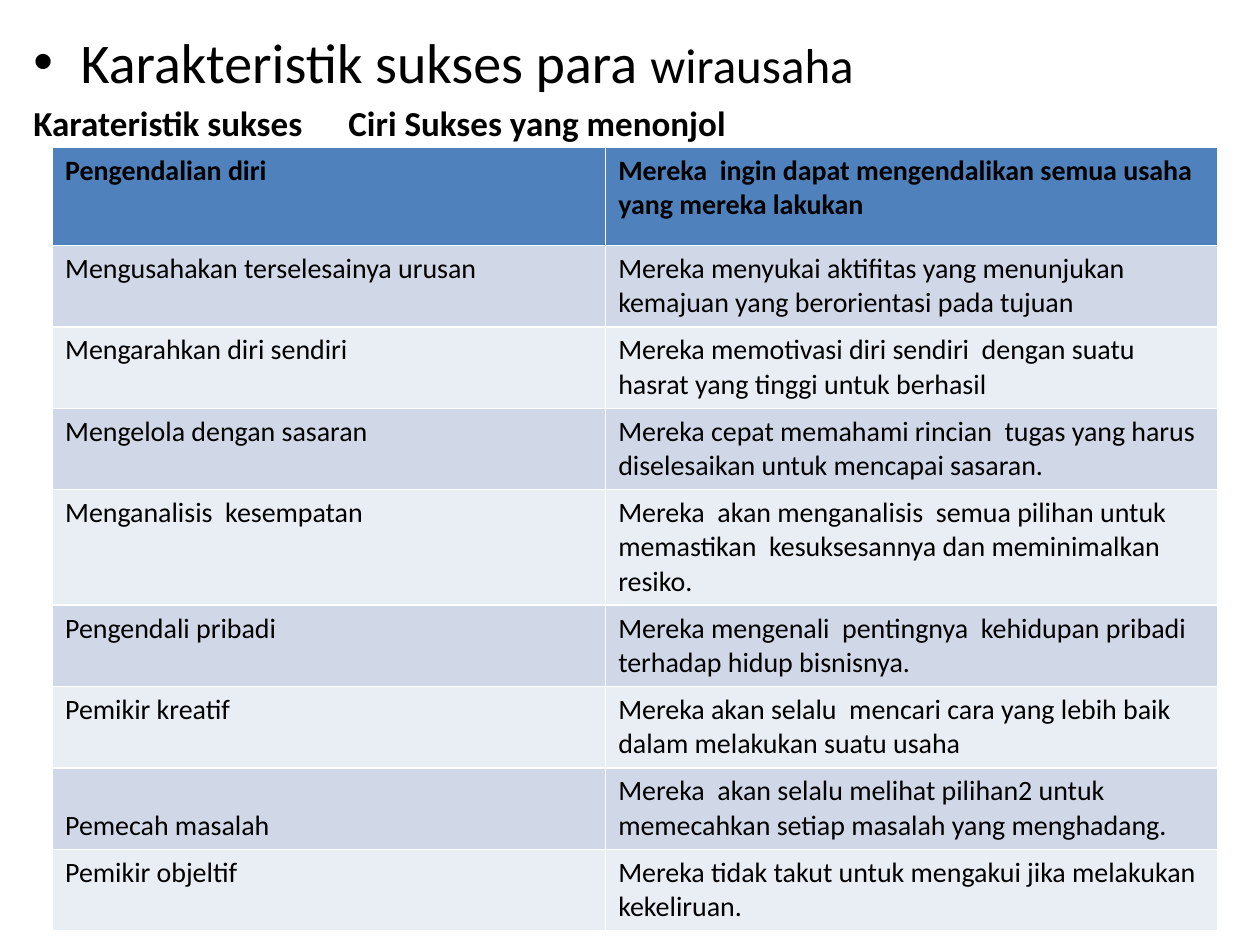
from lxml.etree import SubElement
from pptx import Presentation
from pptx.dml.color import RGBColor
from pptx.enum.text import MSO_ANCHOR, MSO_AUTO_SIZE
from pptx.oxml.ns import qn
from pptx.util import Cm, Pt

FONT = "Calibri"
COLORS = {"text": "000000", "header": "4F81BD", "odd": "D0D8E8", "even": "E9EDF4"}

HEADING = [("Karakteristik sukses para ", 32), ("wirausaha", 28)]
COLUMN_TITLES = ["Karateristik sukses", "Ciri Sukses yang menonjol"]
TRAITS = [
    ("Pengendalian diri",
     "Mereka  ingin dapat mengendalikan semua usaha  yang mereka lakukan"),
    ("Mengusahakan terselesainya urusan",
     "Mereka menyukai aktifitas yang menunjukan kemajuan yang berorientasi pada tujuan"),
    ("Mengarahkan diri sendiri",
     "Mereka memotivasi diri sendiri  dengan suatu hasrat yang tinggi untuk berhasil"),
    ("Mengelola dengan sasaran",
     "Mereka cepat memahami rincian  tugas yang harus diselesaikan untuk mencapai sasaran."),
    ("Menganalisis  kesempatan",
     "Mereka  akan menganalisis  semua pilihan untuk memastikan  kesuksesannya dan meminimalkan resiko."),
    ("Pengendali pribadi",
     "Mereka mengenali  pentingnya  kehidupan pribadi terhadap hidup bisnisnya."),
    ("Pemikir kreatif",
     "Mereka akan selalu  mencari cara yang lebih baik  dalam melakukan suatu usaha"),
    ("Pemecah masalah",
     "Mereka  akan selalu melihat pilihan2 untuk memecahkan setiap masalah yang menghadang."),
    ("Pemikir objeltif",
     "Mereka tidak takut untuk mengakui jika melakukan kekeliruan."),
]
BOTTOM_ALIGNED = {"Pemecah masalah"}
COLUMN_WIDTHS = [Cm(11.15), Cm(12.34)]
ROW_HEIGHT = Cm(1.64)
TALL_ROWS = {0: Cm(1.98), 4: Cm(2.33)}


def add_run(paragraph, text, size, bold=False):
    run = paragraph.add_run()
    run.text = text
    run.font.name = FONT
    run.font.size = Pt(size)
    run.font.bold = bold
    run.font.color.rgb = RGBColor.from_string(COLORS["text"])


def row_color(index):
    if index == 0:
        return COLORS["header"]
    return COLORS["odd"] if index % 2 else COLORS["even"]


def add_intro(slide):
    intro = slide.placeholders[1]
    intro.left, intro.top, intro.width, intro.height = Cm(0.42), Cm(0.42), Cm(24.56), Cm(18.2)
    frame = intro.text_frame
    frame.auto_size = MSO_AUTO_SIZE.NONE
    for text, size in HEADING:
        add_run(frame.paragraphs[0], text, size)

    column_line = frame.add_paragraph()
    add_run(column_line, "\t".join(COLUMN_TITLES), 20, bold=True)
    properties = column_line._p.get_or_add_pPr()
    properties.set("marL", "0")
    properties.set("indent", "0")
    SubElement(properties, qn("a:buNone"))
    tab_stops = SubElement(properties, qn("a:tabLst"))
    SubElement(tab_stops, qn("a:tab"), pos=str(Cm(15.24)), algn="l")


def add_traits(slide):
    heights = [TALL_ROWS.get(index, ROW_HEIGHT) for index in range(len(TRAITS))]
    traits = slide.shapes.add_table(
        len(TRAITS), len(COLUMN_WIDTHS), Cm(1.06), Cm(2.97),
        sum(COLUMN_WIDTHS), sum(heights)).table
    for column, width in zip(traits.columns, COLUMN_WIDTHS):
        column.width = width
    for index, (row, texts) in enumerate(zip(traits.rows, TRAITS)):
        row.height = heights[index]
        for cell, text in zip(row.cells, texts):
            cell.fill.solid()
            cell.fill.fore_color.rgb = RGBColor.from_string(row_color(index))
            if text in BOTTOM_ALIGNED:
                cell.vertical_anchor = MSO_ANCHOR.BOTTOM
            add_run(cell.text_frame.paragraphs[0], text, 16, bold=index == 0)


def main():
    presentation = Presentation()
    presentation.slide_width, presentation.slide_height = Cm(25.4), Cm(19.05)
    slide = presentation.slides.add_slide(presentation.slide_layouts[1])
    title = slide.shapes.title
    title.element.getparent().remove(title.element)
    add_intro(slide)
    add_traits(slide)
    presentation.save("out.pptx")


if __name__ == "__main__":
    main()
